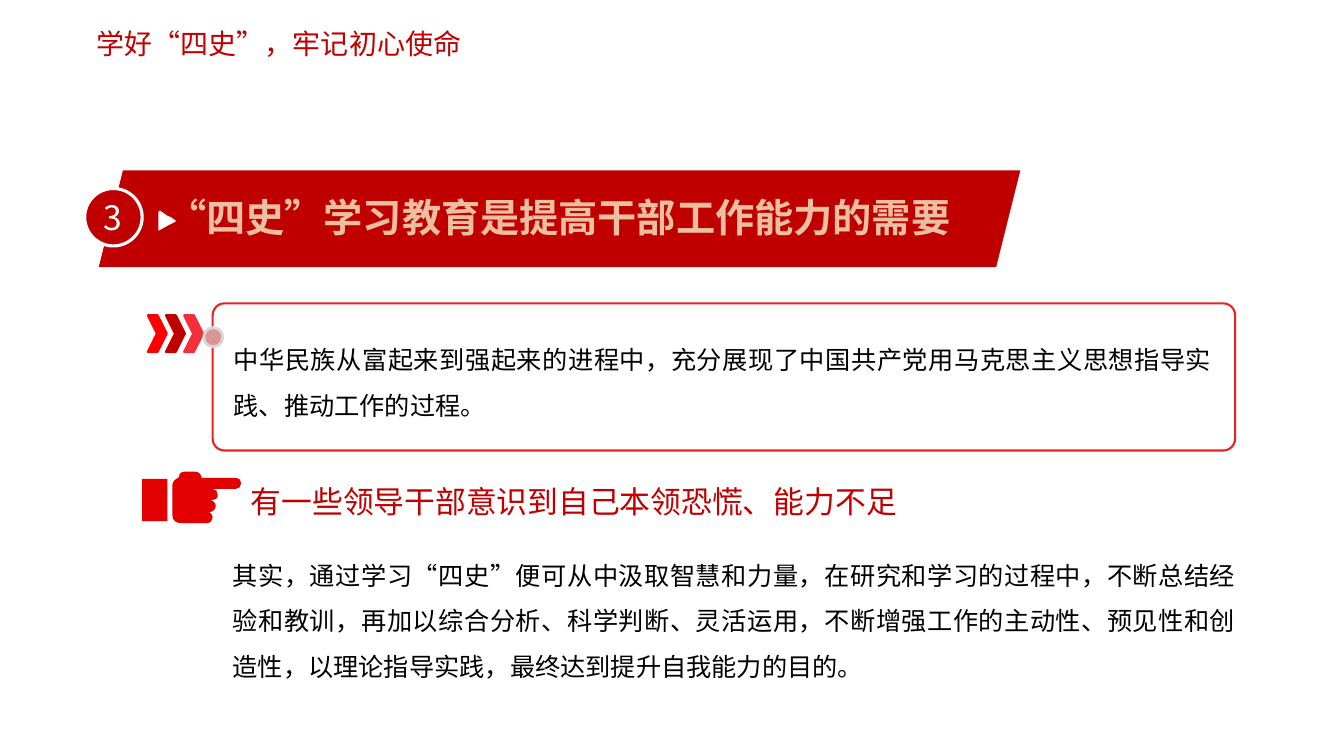
from dataclasses import dataclass
from typing import Optional

from lxml.etree import SubElement
from pptx import Presentation
from pptx.dml.color import RGBColor
from pptx.enum.lang import MSO_LANGUAGE_ID as Lang
from pptx.enum.shapes import MSO_SHAPE as Shape
from pptx.enum.text import MSO_AUTO_SIZE as AutoSize, PP_ALIGN as Align
from pptx.oxml.ns import qn
from pptx.util import Inches, Pt

FONT = "Noto Sans CJK SC"
RED = "C00000"
HAND_RED = "E20000"
WHITE = "FFFFFF"
BLACK = "000000"

Box = tuple[float, float, float, float]


@dataclass
class Block:
    kind: Shape
    box: Box
    fill: Optional[str] = None
    line: Optional[str] = None
    width: float = 2
    corner: Optional[float] = None


@dataclass
class Words:
    text: str
    box: Box
    size: int
    color: str
    bold: bool = False
    align: Optional[Align] = None
    spacing: Optional[float] = None
    wrap: bool = True


@dataclass
class Outline:
    """A closed outline: pairs are corners, sextets are cubic curves."""
    start: tuple[float, float]
    steps: list[tuple[float, ...]]
    fill: str


def rgb(color: str) -> RGBColor:
    return RGBColor.from_string(color)


def paint(shape, fill: Optional[str], line: Optional[str], width: float) -> None:
    shape.shadow.inherit = False
    if fill:
        shape.fill.solid()
        shape.fill.fore_color.rgb = rgb(fill)
    else:
        shape.fill.background()
    if line:
        shape.line.color.rgb = rgb(line)
        shape.line.width = Pt(width)
    else:
        shape.line.fill.background()


def draw_block(shapes, block: Block) -> None:
    shape = shapes.add_shape(block.kind, *map(Inches, block.box))
    if block.corner is not None:
        shape.adjustments[0] = block.corner
    paint(shape, block.fill, block.line, block.width)


def draw_words(shapes, words: Words) -> None:
    frame = shapes.add_textbox(*map(Inches, words.box)).text_frame
    frame.word_wrap = words.wrap
    frame.auto_size = AutoSize.SHAPE_TO_FIT_TEXT
    paragraph = frame.paragraphs[0]
    paragraph.alignment = words.align
    paragraph.line_spacing = words.spacing
    run = paragraph.add_run()
    run.text = words.text
    font = run.font
    font.name = FONT
    font.size = Pt(words.size)
    font.bold = words.bold
    font.color.rgb = rgb(words.color)
    font.language_id = Lang.SIMPLIFIED_CHINESE
    SubElement(run._r.get_or_add_rPr(), qn("a:ea"), typeface=FONT)


def draw_outline(shapes, outline: Outline) -> None:
    """Build the outline from its end points, then bend the curved steps."""
    builder = shapes.build_freeform(*map(Inches, outline.start))
    builder.add_line_segments(
        [tuple(map(Inches, step[-2:])) for step in outline.steps], close=True)
    shape = builder.convert_to_shape()
    segments = list(shape._element.iter(qn("a:lnTo")))
    for segment, step in zip(segments, outline.steps):
        if len(step) == 6:
            curve = segment.getparent().makeelement(qn("a:cubicBezTo"))
            for x, y in zip(step[::2], step[1::2]):
                SubElement(curve, qn("a:pt"), x=str(Inches(x) - shape.left),
                           y=str(Inches(y) - shape.top))
            segment.getparent().replace(segment, curve)
    paint(shape, outline.fill, None, 0)


PLAY_MARK = Outline((1.74, 2.2), [
    (1.66, 2.24), (1.64, 2.25, 1.61, 2.27, 1.59, 2.28),
    (1.58, 2.29, 1.57, 2.29, 1.57, 2.28), (1.57, 2.19),
    (1.57, 2.16, 1.57, 2.13, 1.57, 2.11),
    (1.57, 2.09, 1.58, 2.09, 1.59, 2.09), (1.66, 2.14),
    (1.69, 2.15, 1.71, 2.16, 1.73, 2.18), (1.74, 2.18, 1.75, 2.19, 1.74, 2.2),
], WHITE)

POINTING_HAND = Outline((2.11, 5.13), [
    (2.11, 5.1, 2.09, 5.08, 2.05, 5.08), (2.08, 5.08),
    (2.11, 5.08, 2.14, 5.05, 2.14, 5.02), (2.14, 4.99, 2.11, 4.96, 2.08, 4.96),
    (2.11, 4.96, 2.17, 4.96, 2.16, 4.91), (2.16, 4.88, 2.14, 4.85, 2.11, 4.85),
    (2.34, 4.85),
    (2.37, 4.85, 2.39, 4.83, 2.39, 4.8), (2.39, 4.76, 2.37, 4.74, 2.34, 4.74),
    (2, 4.74), (2, 4.71, 1.97, 4.68, 1.94, 4.68),
    (1.83, 4.68), (1.79, 4.68, 1.77, 4.71, 1.77, 4.74),
    (1.74, 4.75, 1.71, 4.78, 1.71, 4.81),
    (1.71, 5.12), (1.71, 5.16, 1.75, 5.19, 1.79, 5.19),
    (1.94, 5.19), (1.98, 5.19), (2.05, 5.19),
    (2.09, 5.19, 2.11, 5.16, 2.11, 5.13),
], HAND_RED)

CHEVRONS = [
    Block(Shape.CHEVRON, (1.47 + 0.18 * i, 3.13, 0.18, 0.36), color, color)
    for i, color in enumerate(("FF0000", RED, "F42F39"))
]

CONTENT = [
    Words("学好“四史”，牢记初心使命", (0.86, 0.21, 3.94, 0.44), 20, RED,
          align=Align.JUSTIFY),
    Block(Shape.PARALLELOGRAM, (0.98, 1.69, 9.14, 0.96), RED),
    Words("“四史”学习教育是提高干部工作能力的需要", (1.56, 1.87, 8.4, 0.57),
          28, "ECBFA1", bold=True),
    PLAY_MARK,
    Block(Shape.OVAL, (0.84, 1.87, 0.57, 0.57), RED, WHITE, 2.25),
    Words("3", (0.93, 1.9, 0.4, 0.5), 24, WHITE, wrap=False),
    *CHEVRONS,
    Block(Shape.ROUNDED_RECTANGLE, (2.11, 3.01, 10.14, 1.46),
          line="E92324", width=1.5, corner=0.08),
    Block(Shape.FLOWCHART_CONNECTOR, (2.02, 3.25, 0.19, 0.19), "D99593", "D8D8D8"),
    Words("中华民族从富起来到强起来的进程中，充分展现了中国共产党用马克思主义思想"
          "指导实践、推动工作的过程。",
          (2.22, 3.22, 9.9, 1.01), 18, BLACK, align=Align.JUSTIFY, spacing=1.5),
    Words("有一些领导干部意识到自己本领恐慌、能力不足", (2.39, 4.74, 9.21, 0.47),
          22, RED),
    POINTING_HAND,
    Block(Shape.RECTANGLE, (1.41, 4.75, 0.25, 0.42), HAND_RED),
    Words("其实，通过学习“四史”便可从中汲取智慧和力量，在研究和学习的过程中，"
          "不断总结经验和教训，再加以综合分析、科学判断、灵活运用，不断增强工作的"
          "主动性、预见性和创造性，以理论指导实践，最终达到提升自我能力的目的。",
          (2.21, 5.36, 10.15, 1.42), 18, BLACK, align=Align.JUSTIFY, spacing=1.5),
]

DRAW = {Block: draw_block, Words: draw_words, Outline: draw_outline}


def main() -> None:
    deck = Presentation()
    deck.slide_width, deck.slide_height = Inches(13.33), Inches(7.5)
    slide = deck.slides.add_slide(deck.slide_layouts[6])
    for item in CONTENT:
        DRAW[type(item)](slide.shapes, item)
    deck.save("out.pptx")


if __name__ == "__main__":
    main()
